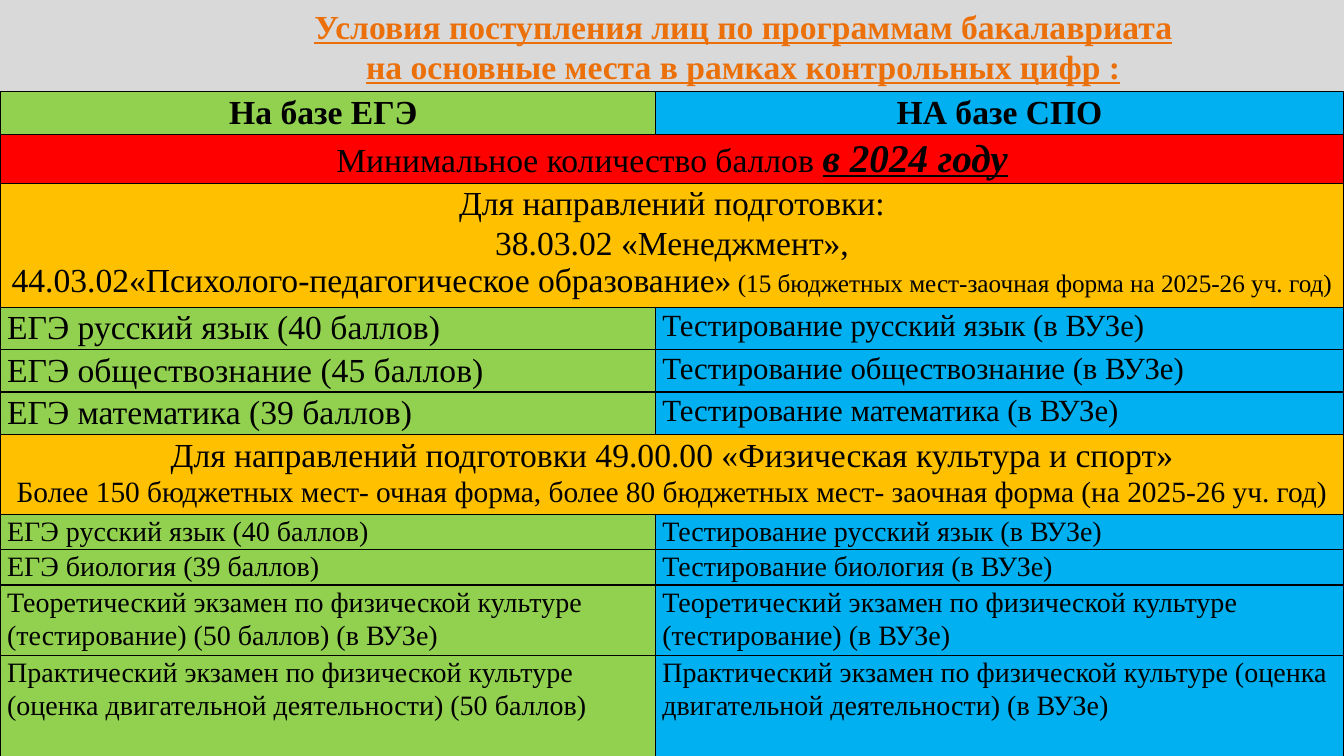
from lxml.etree import SubElement
from pptx import Presentation
from pptx.dml.color import RGBColor
from pptx.enum.text import MSO_ANCHOR, MSO_AUTO_SIZE, PP_ALIGN
from pptx.oxml.ns import qn
from pptx.util import Cm, Pt

FONT = "Times New Roman"
BLACK, GREEN, BLUE = "000000", "92D050", "00B0F0"
RED, AMBER, ORANGE, GREY = "FF0000", "FFC000", "EC700A", "D9D9D9"

TITLE = ["Условия поступления лиц по программам бакалавриата",
         "на основные места в рамках контрольных цифр :"]
COLUMN_WIDTHS = [16.51, 17.36]

HEADER = (1.07, 24, 24, "На базе ЕГЭ ", "НА базе СПО")
MINIMUM = (1.24, RED, [[("Минимальное количество баллов ", 24, ""),
                        ("в 2024 году", 28, "biu")]])
MANAGEMENT = (3.12, AMBER, [
    [("Для направлений подготовки:", 24, "")],
    [("38.03.02 «Менеджмент»,", 24, "")],
    [("44.03.02«Психолого-педагогическое образование»", 24, ""),
     (" (15 бюджетных мест-заочная форма на 2025-26 уч. год)", 18, "")]])
MANAGEMENT_EXAMS = [
    (1.07, 24, 22, "ЕГЭ русский язык (40 баллов)", "Тестирование русский язык (в ВУЗе)"),
    (1.07, 24, 22, "ЕГЭ обществознание (45 баллов)", "Тестирование обществознание (в ВУЗе)"),
    (1.07, 24, 22, "ЕГЭ математика (39 баллов)", "Тестирование математика (в ВУЗе)")]
SPORT = (2.01, AMBER, [
    [("Для направлений подготовки 49.00.00 «Физическая культура и спорт»", 24, "")],
    [("Более 150 бюджетных мест- очная форма, более 80 бюджетных мест- "
      "заочная форма (на 2025-26 уч. год)", 21, "")]])
SPORT_EXAMS = [
    (0.89, 20, 20, "ЕГЭ русский язык (40 баллов)", "Тестирование русский язык (в ВУЗе)"),
    (0.89, 20, 20, "ЕГЭ биология (39 баллов)", "Тестирование биология (в ВУЗе)"),
    (1.78, 20, 20,
     "Теоретический экзамен по физической культуре (тестирование) (50 баллов) (в ВУЗе)",
     "Теоретический экзамен по физической культуре (тестирование) (в ВУЗе)"),
    (2.54, 20, 20,
     "Практический экзамен по физической культуре (оценка двигательной деятельности) (50 баллов)",
     "Практический экзамен по физической культуре (оценка двигательной деятельности) (в ВУЗе)")]
ROWS = [HEADER, MINIMUM, MANAGEMENT, *MANAGEMENT_EXAMS, SPORT, *SPORT_EXAMS]


def color(value):
    return RGBColor.from_string(value)


def format_span(span, size, style, ink=BLACK):
    font = span.font
    font.name, font.size = FONT, Pt(size)
    font.bold, font.italic, font.underline = "b" in style, "i" in style, "u" in style
    font.color.rgb = color(ink)


def style_cell(cell, background):
    properties = cell._tc.get_or_add_tcPr()
    for side in ("lnL", "lnR", "lnT", "lnB"):
        border = SubElement(properties, qn(f"a:{side}"), w=str(Pt(1)))
        SubElement(SubElement(border, qn("a:solidFill")), qn("a:srgbClr"), val=BLACK)
    cell.fill.solid()
    cell.fill.fore_color.rgb = color(background)
    cell.margin_left = cell.margin_right = Cm(0.18)
    cell.margin_top = cell.margin_bottom = 0


def write_cell(cell, paragraphs, align):
    frame = cell.text_frame
    for index, spans in enumerate(paragraphs):
        para = frame.add_paragraph() if index else frame.paragraphs[0]
        para.alignment = align
        para.line_spacing = 1.0 if index == 2 else 1.07
        for text, size, style in spans:
            span = para.add_run()
            span.text = text
            format_span(span, size, style)


def add_title(page):
    title = page.shapes.title
    title.left, title.top, title.width, title.height = Cm(4.85), 0, Cm(27.76), Cm(2.31)
    frame = title.text_frame
    frame.auto_size = MSO_AUTO_SIZE.NONE
    frame.vertical_anchor = MSO_ANCHOR.MIDDLE
    para = frame.paragraphs[0]
    para.text = "\n".join(TITLE)
    para.alignment = PP_ALIGN.CENTER
    for span in para.runs:
        format_span(span, 24, "bu", ORANGE)


def add_conditions(page):
    heights = [row[0] for row in ROWS]
    table = page.shapes.add_table(len(ROWS), 2, 0, Cm(2.31),
                                  Cm(sum(COLUMN_WIDTHS)), Cm(sum(heights))).table
    for column, width in zip(table.columns, COLUMN_WIDTHS):
        column.width = Cm(width)
    for index, row in enumerate(ROWS):
        table.rows[index].height = Cm(row[0])
        left, right = table.cell(index, 0), table.cell(index, 1)
        if len(row) == 3:
            _, background, paragraphs = row
            left.merge(right)
            style_cell(left, background)
            style_cell(right, background)
            write_cell(left, paragraphs, PP_ALIGN.CENTER)
            continue
        _, left_size, right_size, exam, test = row
        style, align = ("b", PP_ALIGN.CENTER) if row is HEADER else ("", PP_ALIGN.LEFT)
        for cell, text, size, background in ((left, exam, left_size, GREEN),
                                             (right, test, right_size, BLUE)):
            style_cell(cell, background)
            write_cell(cell, [[(text, size, style)]], align)


def main():
    deck = Presentation()
    deck.slide_width, deck.slide_height = Cm(33.87), Cm(19.05)
    page = deck.slides.add_slide(deck.slide_layouts[5])
    page.background.fill.solid()
    page.background.fill.fore_color.rgb = color(GREY)
    add_title(page)
    add_conditions(page)
    deck.save("out.pptx")


if __name__ == "__main__":
    main()
